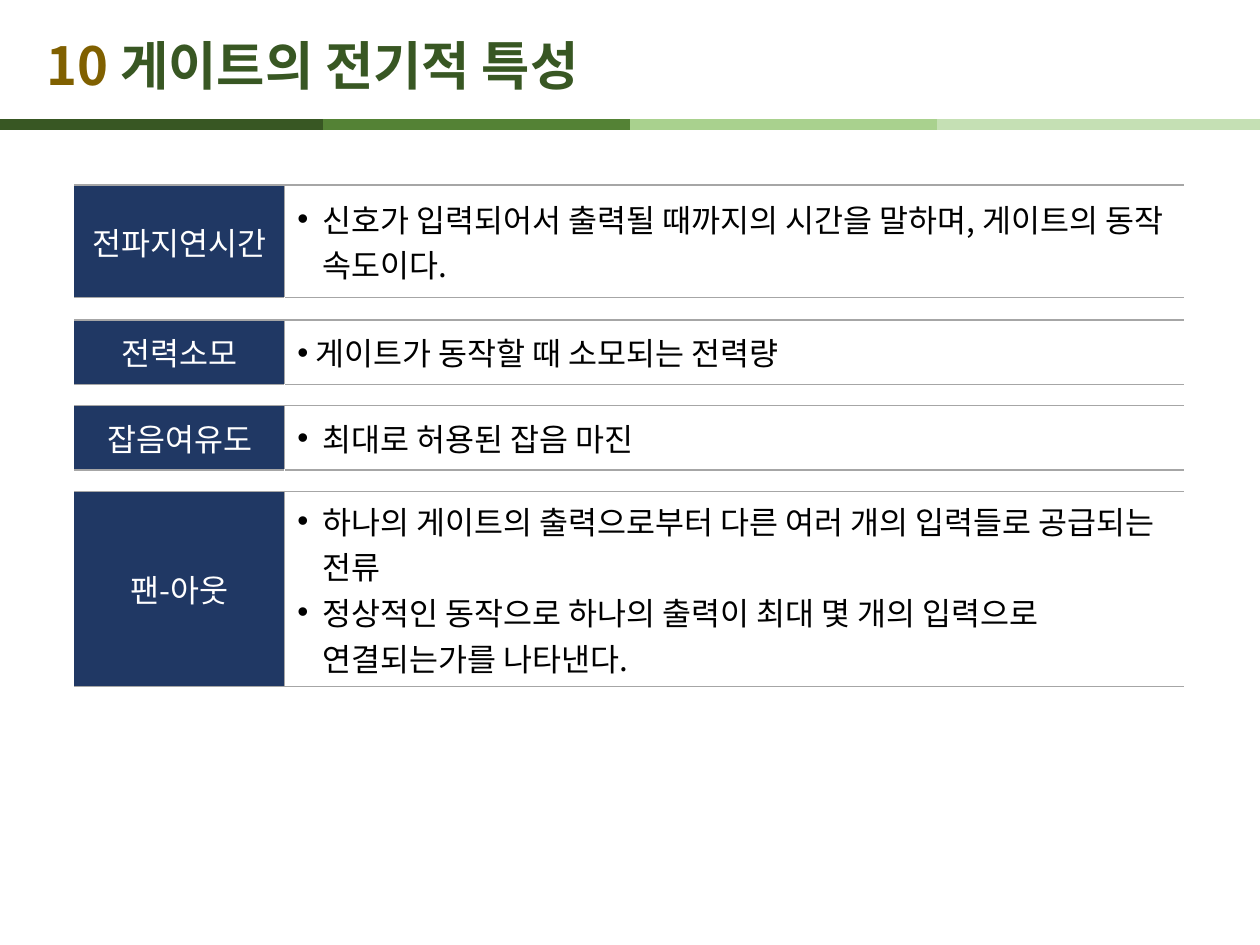
"""Build a slide on the electrical characteristics of logic gates."""
import pptx
import pptx.dml.color
import pptx.enum.shapes
import pptx.enum.text
import pptx.oxml.ns
import pptx.util
from lxml import etree
from pptx.util import Inches, Pt

FONT = "Noto Sans CJK KR"
NAVY, GREY, WHITE, BLACK = "203864", "A6A6A6", "FFFFFF", "000000"
TITLE = [("10 ", "806000"), ("게이트의 전기적 특성", "385723")]
STRIPES = [(0, "385723"), (2.56, "548235"), (5, "A9D18E"), (7.44, "C5E0B4")]
STRIPE_LENGTH, STRIPE_Y = 2.56, 0.99
HANGING = 0.2
TRAITS = [
    ("전파지연시간", 0.89, HANGING,
     ["신호가 입력되어서 출력될 때까지의 시간을 말하며, 게이트의 동작 속도이다."]),
    ("전력소모", 0.51, 0, [" 게이트가 동작할 때 소모되는 전력량"]),
    ("잡음여유도", 0.51, HANGING, ["최대로 허용된 잡음 마진"]),
    ("팬-아웃", 1.55, HANGING,
     ["하나의 게이트의 출력으로부터 다른 여러 개의 입력들로 공급되는 전류",
      "정상적인 동작으로 하나의 출력이 최대 몇 개의 입력으로 연결되는가를 나타낸다."]),
]
GAPS = [0.18, 0.17, 0.17]
COLUMNS = [1.67, 7.14]
TABLE_LEFT, TABLE_TOP = 0.59, 1.47


def rgb(color):
    return pptx.dml.color.RGBColor.from_string(color)


def add(parent, tag, **attributes):
    return etree.SubElement(parent, pptx.oxml.ns.qn(tag), attributes)


def set_font(paragraph, size, color=None, bold=False):
    font = paragraph.font
    font.name, font.size, font.bold = FONT, Pt(size), bold
    if color:
        font.color.rgb = rgb(color)
    add(paragraph._p.pPr.find(pptx.oxml.ns.qn("a:defRPr")), "a:ea", typeface=FONT)


def add_stripe(slide, left, color):
    y = Inches(STRIPE_Y)
    stripe = slide.shapes.add_connector(
        pptx.enum.shapes.MSO_CONNECTOR.STRAIGHT,
        Inches(left), y, Inches(left + STRIPE_LENGTH), y)
    stripe.line.color.rgb = rgb(color)
    stripe.line.width = Pt(6)
    add(stripe._element.spPr, "a:effectLst")


def add_title(slide):
    title = slide.shapes.add_textbox(Inches(0.27), Inches(0.21), Inches(8.58), Inches(0.6))
    frame = title.text_frame
    frame.word_wrap = True
    frame.vertical_anchor = pptx.enum.text.MSO_ANCHOR.MIDDLE
    paragraph = frame.paragraphs[0]
    set_font(paragraph, 30, bold=True)
    for words, color in TITLE:
        run = paragraph.add_run()
        run.text = words
        run.font.color.rgb = rgb(color)


def set_borders(cell, column, divider):
    properties = cell._tc.get_or_add_tcPr()
    sides = {"L": divider if column else None, "R": None if column else divider,
             "T": GREY, "B": GREY}
    for side, color in sides.items():
        border = add(properties, f"a:ln{side}", w=str(Pt(1)))
        if color:
            add(add(border, "a:solidFill"), "a:srgbClr", val=color)
        else:
            add(border, "a:noFill")


def style_cell(cell, column, divider, fill=None):
    set_borders(cell, column, divider)
    cell.vertical_anchor = pptx.enum.text.MSO_ANCHOR.MIDDLE
    if fill:
        cell.fill.solid()
        cell.fill.fore_color.rgb = rgb(fill)
    else:
        cell.fill.background()


def fill_trait(label, content, name, indent, points):
    style_cell(label, 0, GREY, NAVY)
    label.text = name
    heading = label.text_frame.paragraphs[0]
    heading.alignment = pptx.enum.text.PP_ALIGN.CENTER
    set_font(heading, 18, WHITE)
    style_cell(content, 1, GREY)
    content.text = "\n".join(points)
    for point in content.text_frame.paragraphs:
        properties = point._p.get_or_add_pPr()
        properties.set("marL", str(Inches(indent)))
        properties.set("indent", str(-Inches(indent)))
        add(properties, "a:buFont", typeface="Arial")
        add(properties, "a:buChar", char="•")
        set_font(point, 18, BLACK)


def fill_gap(cells):
    for column, cell in enumerate(cells):
        style_cell(cell, column, WHITE)
        cell.margin_top = cell.margin_bottom = 0
        add(cell.text_frame.paragraphs[0]._p, "a:endParaRPr", sz="400")


def add_traits(slide):
    heights = [trait[1] for trait in TRAITS]
    rows = [0] * (len(heights) + len(GAPS))
    rows[::2], rows[1::2] = heights, GAPS
    table = slide.shapes.add_table(
        len(rows), len(COLUMNS), Inches(TABLE_LEFT), Inches(TABLE_TOP),
        Inches(sum(COLUMNS)), Inches(sum(rows))).table
    table.first_row = table.horz_banding = False
    for column, width in zip(table.columns, COLUMNS):
        column.width = Inches(width)
    for index, height in enumerate(rows):
        table.rows[index].height = Inches(height)
        cells = table.rows[index].cells
        if index % 2:
            fill_gap(cells)
        else:
            name, _, indent, points = TRAITS[index // 2]
            fill_trait(cells[0], cells[1], name, indent, points)


def main():
    deck = pptx.Presentation()
    deck.slide_width, deck.slide_height = Inches(10), Inches(7.5)
    slide = deck.slides.add_slide(deck.slide_layouts[6])
    for left, color in STRIPES:
        add_stripe(slide, left, color)
    add_title(slide)
    add_traits(slide)
    deck.save("out.pptx")


if __name__ == "__main__":
    main()
